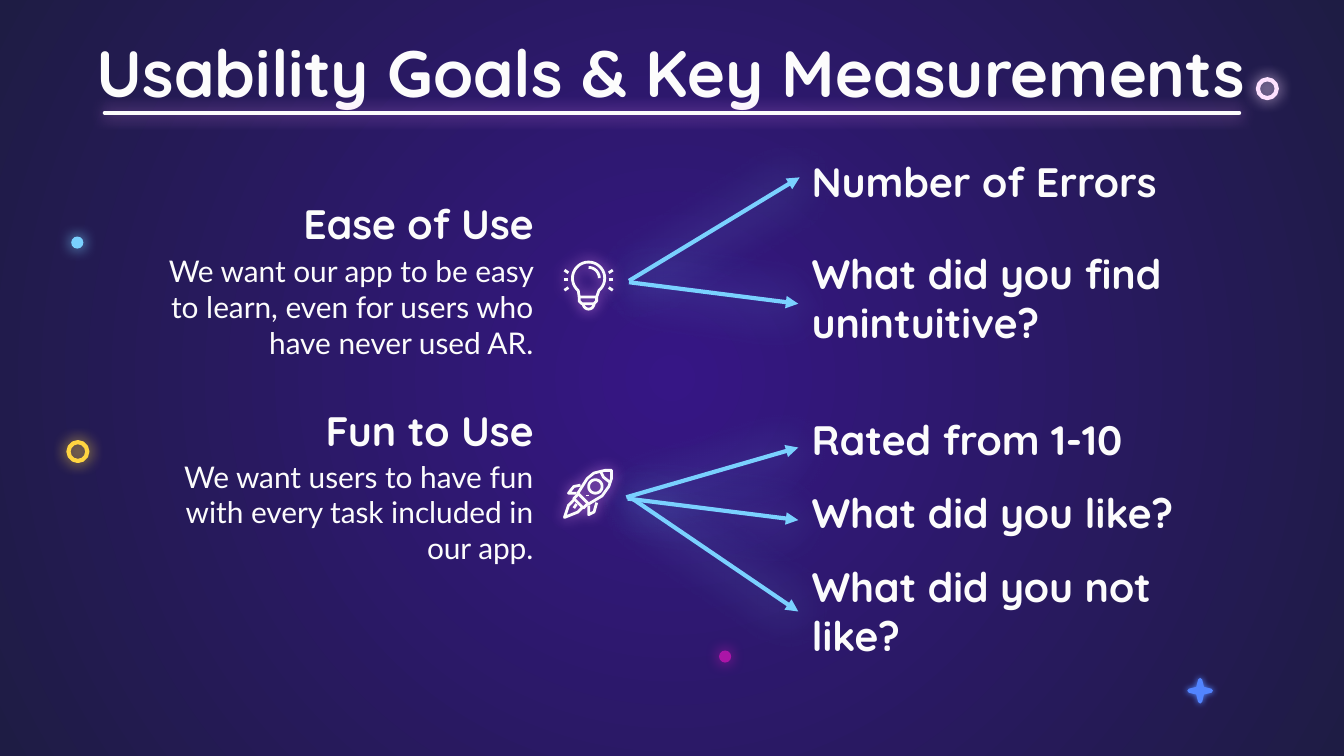
from math import cos, radians, sin

from lxml import etree
from pptx import Presentation
from pptx.dml.color import RGBColor
from pptx.enum.shapes import MSO_CONNECTOR, MSO_SHAPE
from pptx.enum.text import MSO_ANCHOR, MSO_AUTO_SIZE, PP_ALIGN
from pptx.oxml.ns import qn
from pptx.util import Inches, Pt

STRAIGHT = MSO_CONNECTOR.STRAIGHT
OVAL, STAR = MSO_SHAPE.OVAL, MSO_SHAPE.STAR_4_POINT
TOP, BOTTOM = MSO_ANCHOR.TOP, MSO_ANCHOR.BOTTOM
LEFT, CENTER, RIGHT = PP_ALIGN.LEFT, PP_ALIGN.CENTER, PP_ALIGN.RIGHT
NO_AUTOFIT = MSO_AUTO_SIZE.NONE
COMPARISON_LAYOUT = 4

WHITE, PINK, SKY = "FCFCFC", "F79BFF", "7AD1FF"
HEADING_FONT, BODY_FONT = "Quicksand", "Lato"

GOALS = [
    ("Ease of Use", 1.5,
     "We want our app to be easy to learn, even for users who have never used AR.", 1.78),
    ("Fun to Use", 3.04,
     "We want users to have fun with every task included in our app.", 3.31),
]
MEASUREMENTS = [
    ("Number of Errors", 1.19, 0.44),
    ("What did you find unintuitive?", 1.83, 0.85),
    ("Rated from 1-10", 3.11, 0.44),
    ("What did you like?", 3.65, 0.44),
    ("What did you not like?", 4.09, 0.92),
]
ARROWS = [
    (4.68, 2.09, 5.95, 1.32),
    (4.68, 2.1, 5.94, 2.26),
    (4.66, 3.7, 5.94, 3.33),
    (4.67, 3.71, 5.94, 3.87),
    (4.69, 3.7, 5.94, 4.55),
]


def color(value):
    return RGBColor.from_string(value)


def add_glow(shape, value, opacity=100, blur=7.9, distance=0):
    """Add a soft coloured shadow; call after fill and line are set."""
    effects = etree.SubElement(shape._element.spPr, qn("a:effectLst"))
    shadow = etree.SubElement(effects, qn("a:outerShdw"), blurRad=str(Pt(blur)),
                              dist=str(Pt(distance)), dir="5400000",
                              algn="bl", rotWithShape="0")
    tint = etree.SubElement(shadow, qn("a:srgbClr"), val=value)
    etree.SubElement(tint, qn("a:alpha"), val=str(opacity * 1000))


def set_background(slide, center, edge):
    fill = slide.background.fill
    fill.gradient()
    for stop, value in zip(fill.gradient_stops, (center, edge)):
        stop.color.rgb = color(value)
    gradient = slide._element.find(".//" + qn("a:gradFill"))
    gradient.remove(gradient.find(qn("a:lin")))
    radial = etree.SubElement(gradient, qn("a:path"))
    radial.set("path", "circle")
    etree.SubElement(radial, qn("a:fillToRect"),
                     l="50000", t="50000", r="50000", b="50000")


def set_text(shape, box, text, size, font=HEADING_FONT, align=LEFT, anchor=BOTTOM):
    shape.left, shape.top, shape.width, shape.height = map(Inches, box)
    frame = shape.text_frame
    frame.text = text
    frame.word_wrap = True
    frame.auto_size = NO_AUTOFIT
    frame.vertical_anchor = anchor
    frame.margin_left = frame.margin_right = Inches(0.1)
    frame.margin_top = frame.margin_bottom = Inches(0.1)
    paragraph = frame.paragraphs[0]
    properties = paragraph._p.get_or_add_pPr()
    properties.set("marL", "0")
    properties.set("indent", "0")
    etree.SubElement(properties, qn("a:buNone"))
    paragraph.alignment = align
    paragraph.space_before = Pt(0)
    paragraph.font.name = font
    paragraph.font.size = Pt(size)
    paragraph.font.bold = font == HEADING_FONT
    paragraph.font.color.rgb = color(WHITE)


def add_ornament(slide, kind, left, top, size, value, filled=True, line_width=0, blur=7.9):
    shape = slide.shapes.add_shape(kind, Inches(left), Inches(top),
                                   Inches(size), Inches(size))
    if filled:
        shape.fill.solid()
        shape.fill.fore_color.rgb = color(value)
    else:
        shape.fill.background()
    if line_width:
        shape.line.color.rgb = color(value)
        shape.line.width = Pt(line_width)
    else:
        shape.line.fill.background()
    add_glow(shape, value, blur=blur)
    return shape


def add_line(slide, ends, value):
    line = slide.shapes.add_connector(STRAIGHT, *map(Inches, ends))
    line.line.color.rgb = color(value)
    line.line.width = Pt(2.25)
    return line


def add_underline(slide, ends):
    underline = add_line(slide, ends, WHITE)
    underline.line._get_or_add_ln().set("cap", "rnd")
    add_glow(underline, PINK, 68)


def add_arrow(slide, ends):
    arrow = add_line(slide, ends, SKY)
    etree.SubElement(arrow.line._get_or_add_ln(), qn("a:tailEnd"), type="triangle")
    add_glow(arrow, SKY, 88, 25.9, 1.5)


def arc(x, y, radius, start, end):
    """Points every 10 degrees, clockwise from the right."""
    return [(x + radius * cos(radians(angle)), y + radius * sin(radians(angle)))
            for angle in range(start, end + 1, 10)]


def add_icon(slide, strokes):
    """Draw one outline shape from (points, closed) strokes."""
    builder = None
    for points, closed in strokes:
        start, *rest = [(Inches(x), Inches(y)) for x, y in points]
        if builder is None:
            builder = slide.shapes.build_freeform(*start)
        else:
            builder.move_to(*start)
        builder.add_line_segments(rest, close=closed)
    icon = builder.convert_to_shape()
    icon.fill.background()
    icon.line.color.rgb = color(WHITE)
    icon.line.width = Pt(1.5)
    add_glow(icon, PINK, 70)


def add_light_bulb(slide):
    x, y = 4.38, 2.07
    rays = [([(x + side * 0.15, y + near), (x + side * 0.18, y + far)], False)
            for side in (-1, 1)
            for near, far in ((-0.04, -0.06), (0.01, 0.01), (0.07, 0.09))]
    add_icon(slide, [
        ([(4.31, 2.21)] + arc(x, y, 0.12, 130, 410) + [(4.44, 2.21)], True),
        ([(4.31, 2.21), (4.31, 2.24), (4.33, 2.26), (4.42, 2.26),
          (4.44, 2.24), (4.44, 2.21)], False),
        (arc(x, 2.26, 0.04, 0, 180), False),
        (arc(x, y, 0.08, 270, 360), False),
    ] + rays)


def add_rocket(slide):
    add_icon(slide, [
        ([(4.55, 3.5), (4.5, 3.5), (4.42, 3.52), (4.37, 3.56), (4.3, 3.67),
          (4.38, 3.75), (4.48, 3.69), (4.53, 3.62), (4.55, 3.56)], True),
        ([(4.47, 3.51), (4.49, 3.55), (4.54, 3.59)], False),
        (arc(4.43, 3.62, 0.05, 0, 350), True),
        ([(4.32, 3.61), (4.27, 3.62), (4.23, 3.67), (4.29, 3.67)], False),
        ([(4.38, 3.76), (4.38, 3.83), (4.42, 3.81), (4.44, 3.74)], False),
        ([(4.3, 3.68), (4.27, 3.71), (4.34, 3.78), (4.37, 3.75)], False),
        ([(4.27, 3.72), (4.23, 3.76), (4.2, 3.85), (4.3, 3.81), (4.33, 3.78)], False),
        ([(4.27, 3.78), (4.29, 3.75)], False),
        ([(4.37, 3.68), (4.37, 3.69)], False),
    ])


def add_ornaments(slide):
    add_ornament(slide, OVAL, 0.51, 3.29, 0.14, "FFD541", False, 2.25)
    add_ornament(slide, OVAL, 9.36, 0.59, 0.14, "FFE2FF", False, 2.25)
    add_ornament(slide, OVAL, 0.53, 1.76, 0.09, SKY)
    add_ornament(slide, OVAL, 5.35, 4.84, 0.09, "AB15A7")
    sparkle = add_ornament(slide, STAR, 8.85, 5.06, 0.16, "5284FF", True, 2.25, 3.4)
    sparkle.adjustments[0] = 0.14


def main():
    presentation = Presentation()
    presentation.slide_width = Inches(10)
    presentation.slide_height = Inches(10) * 9 // 16
    slide = presentation.slides.add_slide(presentation.slide_layouts[COMPARISON_LAYOUT])
    set_background(slide, "361685", "1E1C44")
    add_ornaments(slide)

    title, *bodies = slide.placeholders
    set_text(title, (0.13, 0.14, 9.73, 0.63), "Usability Goals & Key Measurements",
             35, align=CENTER, anchor=TOP)
    add_underline(slide, (0.78, 0.84, 9.22, 0.84))

    for index, (heading, heading_top, description, description_top) in enumerate(GOALS):
        heading_shape, description_shape = bodies[2 * index:2 * index + 2]
        set_text(heading_shape, (0.97, heading_top, 3.1, 0.44), heading, 22, align=RIGHT)
        set_text(description_shape, (0.97, description_top, 3.1, 0.58), description,
                 16, BODY_FONT, RIGHT, TOP)
    add_light_bulb(slide)
    add_rocket(slide)

    for text, top, height in MEASUREMENTS:
        set_text(slide.shapes.add_textbox(0, 0, 0, 0), (5.94, top, 3.1, height), text, 22)
    for ends in ARROWS:
        add_arrow(slide, ends)
    presentation.save("out.pptx")


if __name__ == "__main__":
    main()
